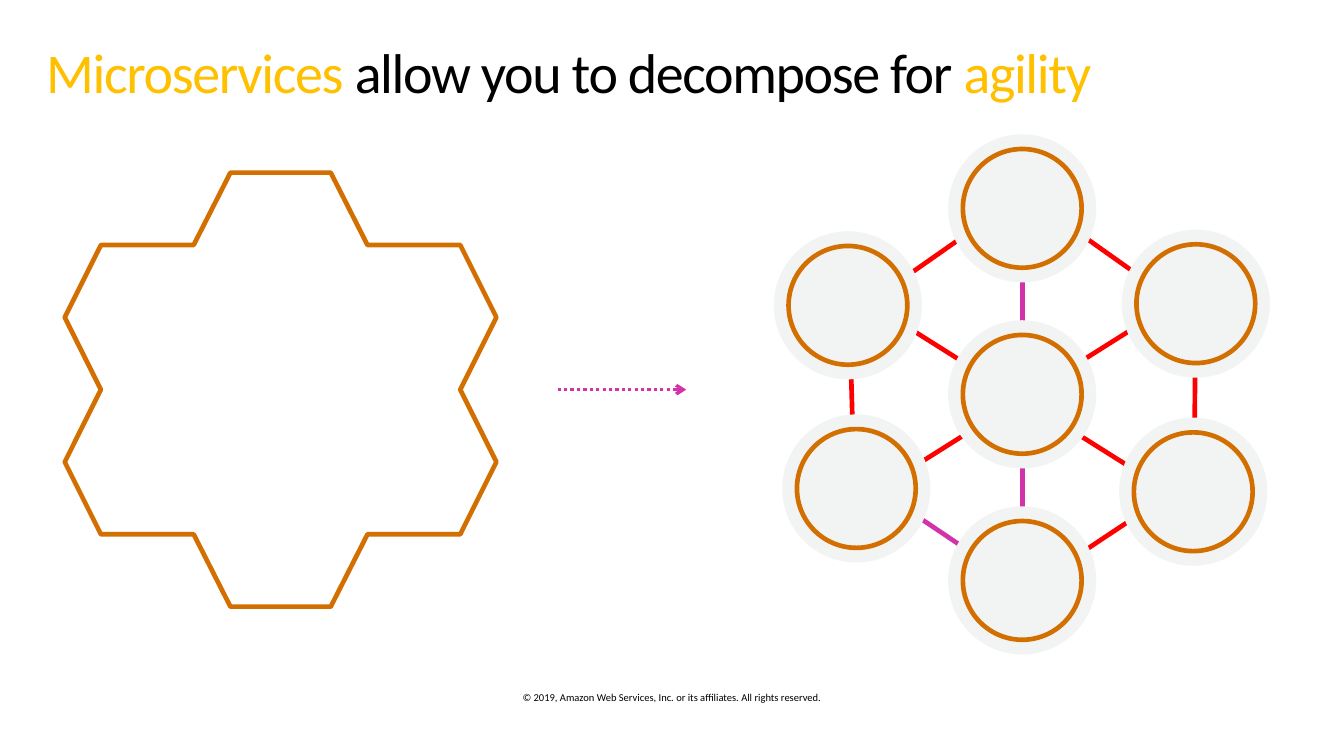
from lxml import etree
from pptx import Presentation
from pptx.dml.color import RGBColor
from pptx.enum.dml import MSO_LINE
from pptx.enum.shapes import MSO_CONNECTOR, MSO_SHAPE
from pptx.enum.text import MSO_ANCHOR, MSO_AUTO_SIZE, PP_ALIGN
from pptx.oxml.ns import qn
from pptx.util import Pt

LINE, OVAL = MSO_CONNECTOR.STRAIGHT, MSO_SHAPE.OVAL
DOT, TOP, CENTER = MSO_LINE.ROUND_DOT, MSO_ANCHOR.TOP, PP_ALIGN.CENTER
FIXED = MSO_AUTO_SIZE.NONE
ORANGE, RED, PINK = "D26F00", "FF0000", "D232AA"
GOLD, BLACK, GRAY = "FFC000", "000000", "F2F3F3"


def color(code):
    return RGBColor.from_string(code)


def connect(x1, y1, x2, y2, code, width):
    link = slide.shapes.add_connector(LINE, Pt(x1), Pt(y1), Pt(x2), Pt(y2))
    link.line.color.rgb = color(code)
    link.line.width = Pt(width)
    etree.SubElement(link._element.spPr, qn("a:effectLst"))
    return link


deck = Presentation()
deck.slide_width, deck.slide_height = Pt(1152), Pt(648)
slide = deck.slides.add_slide(deck.slide_layouts[5])

title = slide.shapes.title
place = {"left": 25.2, "top": 27.4, "width": 1101.6, "height": 85}
for name, value in place.items():
    setattr(title, name, Pt(value))
frame = title.text_frame
style = {"margin_left": Pt(14.4), "margin_right": Pt(14.4),
         "margin_top": Pt(11.5), "margin_bottom": Pt(11.5),
         "vertical_anchor": TOP, "word_wrap": True, "auto_size": FIXED}
for name, value in style.items():
    setattr(frame, name, value)
para = frame.paragraphs[0]
para.alignment = PP_ALIGN.LEFT
para.line_spacing = 0.9
words = [("Microservices", GOLD), (" allow you to decompose for ", BLACK), ("agility", GOLD)]
for text, code in words:
    run = para.add_run()
    run.text = text
    for name, value in {"name": "Calibri", "size": Pt(48)}.items():
        setattr(run.font, name, value)
    run.font.color.rgb = color(code)
    run._r.get_or_add_rPr().set("spc", "-120")

mid_x, mid_y = 240.5, 334
edge = [(43, 186), (74.5, 124), (154, 124), (185, 62), (154, 0)]
right = [(x, -y) for x, y in edge] + edge[-2::-1]
ring = right + [(-x, y) for x, y in reversed(right)]
points = [(Pt(mid_x + x), Pt(mid_y + y)) for x, y in ring]
path = slide.shapes.build_freeform(*points[0], scale=1.0)
path.add_line_segments(points[1:], close=True)
whole = path.convert_to_shape()
whole.shadow.inherit = False
whole.fill.background()
whole.line.color.rgb = color(ORANGE)
whole.line.width = Pt(4)

links = [
    (726.5, 211, 733.7, 469.4, RED), (1025.3, 209.5, 1023.1, 472.3, RED),
    (838, 138.2, 1061.3, 296.6, RED), (690.5, 297.4, 911.5, 142.6, RED),
    (839.5, 532, 1059, 386, RED), (697.7, 383, 913, 527.8, PINK),
    (876.2, 127.4, 876.2, 548.6, PINK), (690.5, 225.4, 1059, 457.2, RED),
    (694.8, 455.8, 1062.7, 224, RED),
]
for link in links:
    connect(*link, 4)

nodes = [(876.2, 178.6), (726.8, 261.7), (876.2, 497.5), (1022.8, 421.5),
         (876.2, 338), (734, 418.7), (1025, 260.3)]
for x, y in nodes:
    for size, edged in [(127, False), (101.8, True)]:
        disk = slide.shapes.add_shape(OVAL, Pt(x - size / 2), Pt(y - size / 2), Pt(size), Pt(size))
        disk.shadow.inherit = False
        disk.fill.solid()
        disk.fill.fore_color.rgb = color(GRAY)
        if edged:
            disk.line.color.rgb = color(ORANGE)
            disk.line.width = Pt(4)
        else:
            disk.line.fill.background()

arrow = connect(478, 334, 588.2, 334, PINK, 2.75)
arrow.line.dash_style = DOT
etree.SubElement(arrow.line._get_or_add_ln(), qn("a:tailEnd"), type="arrow")

note = slide.shapes.add_textbox(Pt(419.8), Pt(592.6), Pt(311.8), Pt(11))
frame = note.text_frame
for side in ("left", "right", "top", "bottom"):
    setattr(frame, "margin_" + side, Pt(0))
frame.word_wrap = True
para = frame.paragraphs[0]
para.text = "© 2019, Amazon Web Services, Inc. or its affiliates. All rights reserved."
para.alignment = CENTER
for name, value in {"name": "Calibri", "size": Pt(9)}.items():
    setattr(para.font, name, value)
para.font.color.rgb = color(BLACK)

deck.save("out.pptx")
